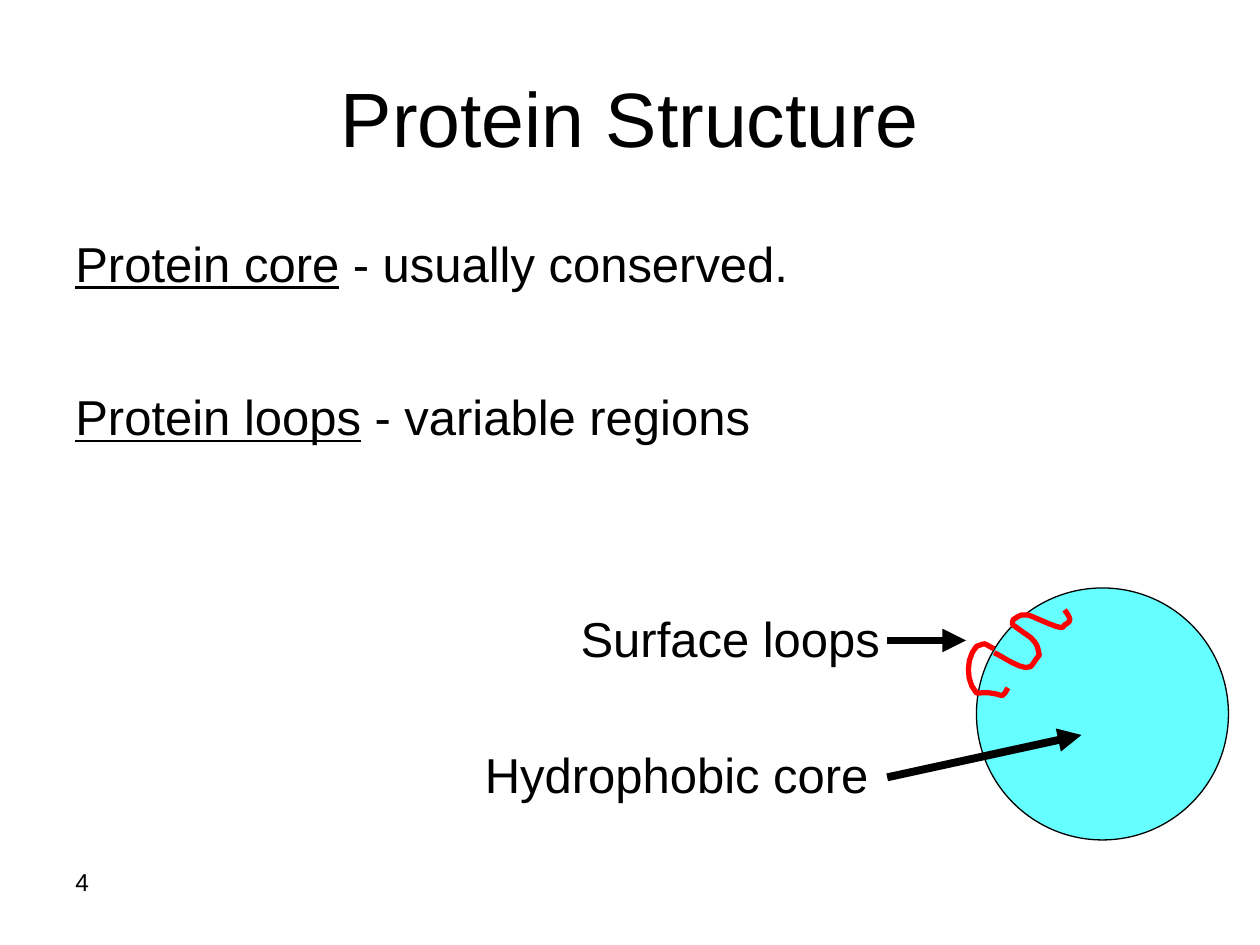
from lxml import etree
from pptx import Presentation
from pptx.dml.color import RGBColor
from pptx.enum.shapes import MSO_CONNECTOR, MSO_SHAPE
from pptx.enum.text import MSO_ANCHOR, PP_ALIGN
from pptx.oxml.ns import qn
from pptx.util import Pt

STRAIGHT = MSO_CONNECTOR.STRAIGHT
OVAL = MSO_SHAPE.OVAL
MIDDLE, TOP = MSO_ANCHOR.MIDDLE, MSO_ANCHOR.TOP
CENTER, LEFT = PP_ALIGN.CENTER, PP_ALIGN.LEFT
BLACK = RGBColor(0x00, 0x00, 0x00)
CYAN = RGBColor(0x66, 0xFF, 0xFF)
RED = RGBColor(0xFF, 0x00, 0x00)
FONT = "Arial"
STEPS = 6

UPPER_LOOP = [
    (50.4, 12.5),
    (54, 17.5), (54.7, 19), (50.4, 21.1),
    (49.7, 21.8), (49.7, 22.6), (48.2, 22.6),
    (43.2, 21.8), (33.8, 16.8), (29.5, 15.4),
    (28.1, 15.4), (26.6, 15.4), (25.9, 15.4),
    (23.8, 16.1), (20.9, 18.2), (20.9, 18.2),
    (20.9, 19), (20.2, 19.7), (20.9, 21.1),
    (23.8, 23.3), (31, 28.3), (31, 28.3),
    (36, 33.4), (34.6, 34.1), (36, 38.4),
    (33.8, 40.6), (33.1, 42.7), (31, 44.9),
    (26.6, 47.8), (15.1, 39.1), (10.1, 37),
]
LOWER_LOOP = [
    (10.1, 34.8),
    (2.9, 31.2), (6.5, 31.2), (0, 33.4),
    (-5.8, 39.8), (-6.5, 52.8), (0, 60),
    (17.3, 58.6), (13, 65.8), (18, 57.1),
]


def add_text(slide, box, paragraphs, size, wrap=True, anchor=TOP, **formats):
    """Add a text box whose paragraphs are lists of (text, underlined) runs."""
    tf = slide.shapes.add_textbox(*map(Pt, box)).text_frame
    tf.word_wrap, tf.vertical_anchor = wrap, anchor
    for i, runs in enumerate(paragraphs):
        p = tf.paragraphs[0] if i == 0 else tf.add_paragraph()
        for name, value in formats.items():
            setattr(p, name, value if i or name != "space_before" else Pt(0))
        for text, underlined in runs:
            r = p.add_run()
            r.text = text
            font = {"name": FONT, "size": Pt(size), "underline": underlined}
            for name, value in font.items():
                setattr(r.font, name, value)
            r.font.color.rgb = BLACK


def add_arrow(slide, x1, y1, x2, y2):
    """Add a thick black arrow pointing at the second end."""
    s = slide.shapes.add_connector(STRAIGHT, *map(Pt, (x1, y1, x2, y2)))
    s.line.color.rgb = BLACK
    s.line.width = Pt(4.5)
    etree.SubElement(s.line._get_or_add_ln(), qn("a:tailEnd"), type="triangle")
    etree.SubElement(s._element.spPr, qn("a:effectLst"))


def bezier_points(controls):
    """Return points along a chain of cubic curves."""
    points = [controls[0]]
    for i in range(0, len(controls) - 1, 3):
        for step in range(1, STEPS + 1):
            t = step / STEPS
            weights = ((1 - t) ** 3, 3 * t * (1 - t) ** 2, 3 * t * t * (1 - t), t ** 3)
            points.append(tuple(
                sum(w * c[axis] for w, c in zip(weights, controls[i:i + 4]))
                for axis in (0, 1)))
    return points


def style_shape(s, fill, line, width):
    """Set the fill, outline and shadow of a shape."""
    s.shadow.inherit = False
    if fill is None:
        s.fill.background()
    else:
        s.fill.solid()
        s.fill.fore_color.rgb = fill
    s.line.color.rgb = line
    s.line.width = Pt(width)


def add_loop(slide, x, y, controls, fill=None):
    """Add a red surface loop relative to the given corner."""
    points = [(Pt(x + dx), Pt(y + dy)) for dx, dy in bezier_points(controls)]
    builder = slide.shapes.build_freeform(*points[0])
    builder.add_line_segments(points[1:], close=False)
    style_shape(builder.convert_to_shape(), fill, RED, 3)


def add_protein(slide, x, y, w, h):
    """Draw the protein at the right of the box with its labels at the left."""
    cx = x + w - h
    s = slide.shapes.add_shape(OVAL, *map(Pt, (cx, y, h, h)))
    style_shape(s, CYAN, BLACK, 0.75)
    add_loop(slide, cx, y, UPPER_LOOP, CYAN)
    add_loop(slide, cx, y, LOWER_LOOP)
    labels = [
        ("Hydrophobic core", 0, 85.9, 234.7, 108.2, (60, 84)),
        ("Surface loops", 54.7, 8.2, 185.8, 30, (-6, 30)),
    ]
    for text, dx, dy, width, tail_y, (tip_x, tip_y) in labels:
        add_arrow(slide, x + 237, y + tail_y, cx + tip_x, y + tip_y)
        add_text(slide, (x + dx, y + dy, width, 41), [[(text, False)]], 28, wrap=False)


def add_title(slide, x, y, w, h):
    """Place the centred title in the box."""
    add_text(slide, (x, y, w, h), [[("Protein Structure", False)]], 44,
             anchor=MIDDLE, alignment=CENTER)


def add_body(slide, x, y, w, h):
    """Place the two statements about protein regions in the box."""
    paragraphs = [
        [("Protein core", True), (" - usually conserved.", False)],
        [("Protein loops", True), (" - variable regions", False)],
    ]
    add_text(slide, (x, y, w, h), paragraphs, 28, wrap=False,
             alignment=LEFT, line_spacing=1.2, space_before=Pt(47.5))


def add_page_number(slide, x, y, w, h):
    """Place the page number in the box."""
    add_text(slide, (x, y, w, h), [[("4", False)]], 14)


def main():
    """Build and save the slide."""
    prs = Presentation()
    prs.slide_width, prs.slide_height = Pt(720), Pt(540)
    slide = prs.slides.add_slide(prs.slide_layouts[6])
    add_page_number(slide, 36, 492, 168, 37.5)
    add_body(slide, 36, 123, 430.5, 135.5)
    add_protein(slide, 270, 336, 432, 144)
    add_title(slide, 36, 21.6, 648, 90)
    prs.save("out.pptx")


if __name__ == "__main__":
    main()
